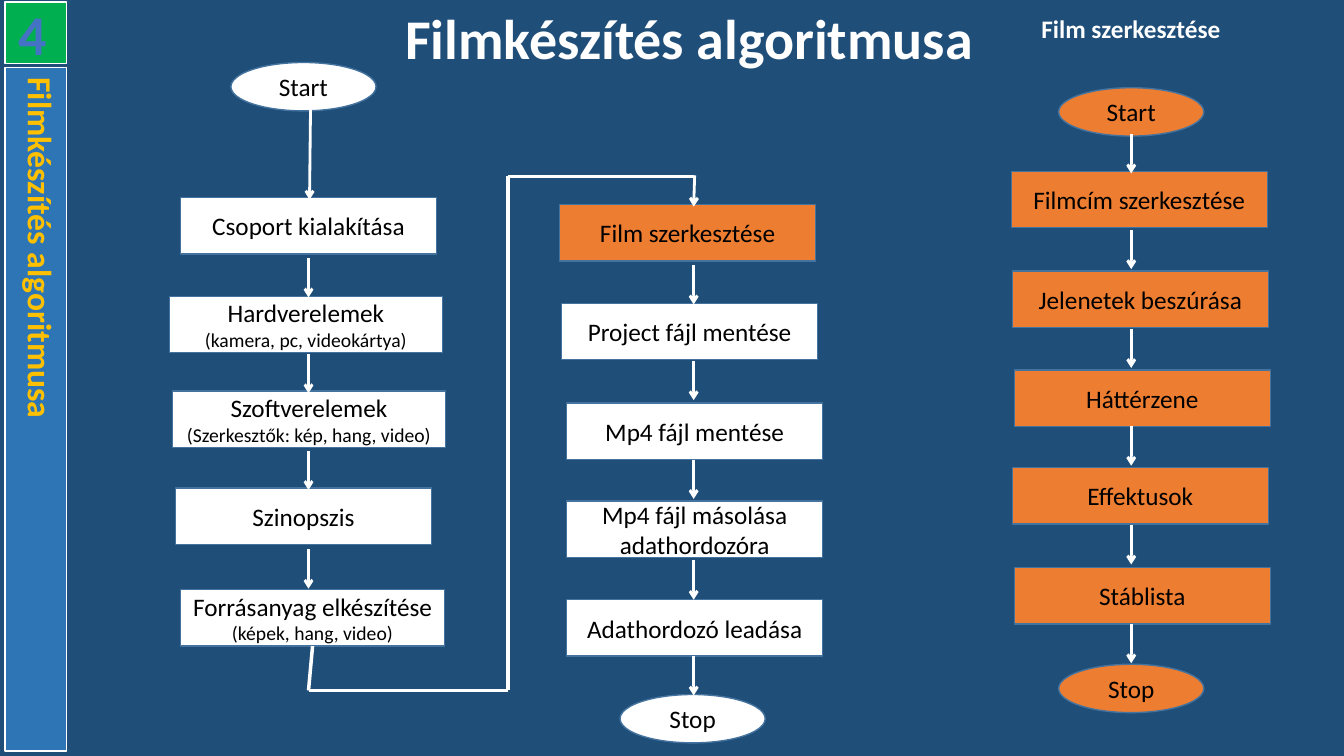
"""Build the film-making flowchart slide."""
from lxml import etree
from pptx import Presentation
from pptx.dml.color import RGBColor
from pptx.enum import shapes, text
from pptx.oxml import ns
from pptx.util import Inches, Pt

WHITE, ORANGE, EDGE, BLACK = "FFFFFF", "ED7D31", "43739E", "000000"
RECT, OVAL = shapes.MSO_SHAPE.RECTANGLE, shapes.MSO_SHAPE.OVAL
CENTER = text.PP_ALIGN.CENTER
TITLE = "Filmkészítés algoritmusa"
STEP_SIZE, END_SIZE, ARROW = (2.54, 0.56), (1.44, 0.48), 0.39

STEPS = [
    (1.79, 1.96, 2.54, WHITE, ["Csoport kialakítása"]),
    (1.68, 2.94, 2.71, WHITE, ["Hardverelemek", "(kamera, pc, videokártya)"]),
    (1.71, 3.88, 2.71, WHITE, ["Szoftverelemek", "(Szerkesztők: kép, hang, video)"]),
    (1.74, 4.84, 2.54, WHITE, ["Szinopszis"]),
    (1.79, 5.85, 2.62, WHITE, ["Forrásanyag elkészítése", "(képek, hang, video)"]),
    (5.55, 2.03, 2.54, ORANGE, ["Film szerkesztése"]),
    (5.57, 3.01, 2.54, WHITE, ["Project fájl mentése"]),
    (5.62, 4.00, 2.54, WHITE, ["Mp4 fájl mentése"]),
    (5.62, 4.97, 2.54, WHITE, ["Mp4 fájl másolása adathordozóra"]),
    (5.62, 5.95, 2.54, WHITE, ["Adathordozó leadása"]),
    (10.03, 1.70, 2.54, ORANGE, ["Filmcím szerkesztése"]),
    (10.04, 2.69, 2.54, ORANGE, ["Jelenetek beszúrása"]),
    (10.06, 3.67, 2.54, ORANGE, ["Háttérzene"]),
    (10.04, 4.64, 2.54, ORANGE, ["Effektusok"]),
    (10.06, 5.63, 2.54, ORANGE, ["Stáblista"]),
]
ENDS = [
    (2.29, 0.62, WHITE, "Start"),
    (6.15, 6.89, WHITE, "Stop"),
    (10.5, 0.87, ORANGE, "Start"),
    (10.5, 6.59, ORANGE, "Stop"),
]
ARROW_STARTS = {
    3.06: [2.56, 3.51, 4.47, 5.45],
    6.88: [2.63, 3.58, 4.56, 5.56, 6.51],
    11.22: [1.33, 2.28, 3.26, 4.23, 5.21, 6.19],
}
ENTRY_ARROWS = [(3.08, 1.07, 3.07, 1.98), (6.89, 1.74, 6.88, 2.05)]
RETURN_PATH = [(3.1, 6.41), (3.06, 6.85), (5.04, 6.85), (5.04, 1.75), (6.88, 1.75)]


def color(value):
    return RGBColor.from_string(value)


def write(box, lines, align=None, **frame_format):
    frame = box.text_frame
    for name, value in frame_format.items():
        setattr(frame, name, value)
    for index, (words, size, shade, bold) in enumerate(lines):
        para = frame.paragraphs[0] if index == 0 else frame.add_paragraph()
        para.alignment = align
        span = para.add_run()
        span.text = words
        for name, value in {"size": Pt(size), "name": "Calibri", "bold": bold}.items():
            setattr(span.font, name, value)
        span.font.color.rgb = color(shade)


def add_box(page, kind, place, fill, edge):
    box = page.shapes.add_shape(kind, *map(Inches, place))
    box.shadow.inherit = False
    box.fill.solid()
    box.fill.fore_color.rgb = color(fill)
    box.line.color.rgb = color(edge)
    box.line.width = Pt(1)
    return box


def add_node(page, kind, place, fill, lines):
    box = add_box(page, kind, place, fill, EDGE)
    sized = [(words, 14 if index else 18, BLACK, False) for index, words in enumerate(lines)]
    write(box, sized, CENTER, word_wrap=True, vertical_anchor=text.MSO_ANCHOR.MIDDLE)


def add_label(page, place, words, size, shade=WHITE, align=None, wrap=False):
    box = page.shapes.add_textbox(*map(Inches, place))
    write(box, [(words, size, shade, True)], align, word_wrap=wrap,
          auto_size=text.MSO_AUTO_SIZE.SHAPE_TO_FIT_TEXT)
    return box


def add_line(page, ends, width, arrow):
    line = page.shapes.add_connector(shapes.MSO_CONNECTOR.STRAIGHT, *map(Inches, ends))
    line.line.color.rgb = color(WHITE)
    line.line.width = Pt(width)
    if arrow:
        etree.SubElement(line.line._get_or_add_ln(), ns.qn("a:tailEnd"), type="arrow")
    etree.SubElement(line._element.spPr, ns.qn("a:effectLst"))


def add_sidebar(page):
    band = add_box(page, RECT, (0.05, 0.67, 0.61, 6.78), "2E75B6", WHITE)
    write(band, [(TITLE, 24, "FFC000", True)], text.PP_ALIGN.LEFT, word_wrap=True,
          vertical_anchor=text.MSO_ANCHOR.TOP)
    band.text_frame._txBody.bodyPr.set("vert", "vert")
    add_box(page, RECT, (0.05, 0.02, 0.61, 0.61), "00B050", WHITE)
    number = add_label(page, (-0.17, -0.05, 0.98, 0.77), "4", 40, "4472C4", CENTER, True)
    outline = etree.Element(ns.qn("a:ln"), w=str(Pt(0.75)))
    fill = etree.SubElement(outline, ns.qn("a:solidFill"))
    etree.SubElement(fill, ns.qn("a:srgbClr"), val=WHITE)
    number.text_frame.paragraphs[0].runs[0]._r.get_or_add_rPr().insert(0, outline)


def main():
    deck = Presentation()
    deck.slide_width, deck.slide_height = Inches(13.33), Inches(7.5)
    page = deck.slides.add_slide(deck.slide_layouts[6])
    page.background.fill.solid()
    page.background.fill.fore_color.rgb = color("1F4E79")

    add_label(page, (3.92, -0.01, 5.9, 0.77), TITLE, 40)
    add_label(page, (10.23, 0.08, 1.99, 0.4), "Film szerkesztése", 18)
    for left, top, width, fill, lines in STEPS:
        add_node(page, RECT, (left, top, width, STEP_SIZE[1]), fill, lines)
    for left, top, fill, words in ENDS:
        add_node(page, OVAL, (left, top, *END_SIZE), fill, [words])
    for x, starts in ARROW_STARTS.items():
        for y in starts:
            add_line(page, (x, y, x, y + ARROW), 2, True)
    for ends in ENTRY_ARROWS:
        add_line(page, ends, 2, True)
    for start, end in zip(RETURN_PATH, RETURN_PATH[1:]):
        add_line(page, (*start, *end), 2.5, False)
    add_sidebar(page)
    deck.save("out.pptx")


if __name__ == "__main__":
    main()
